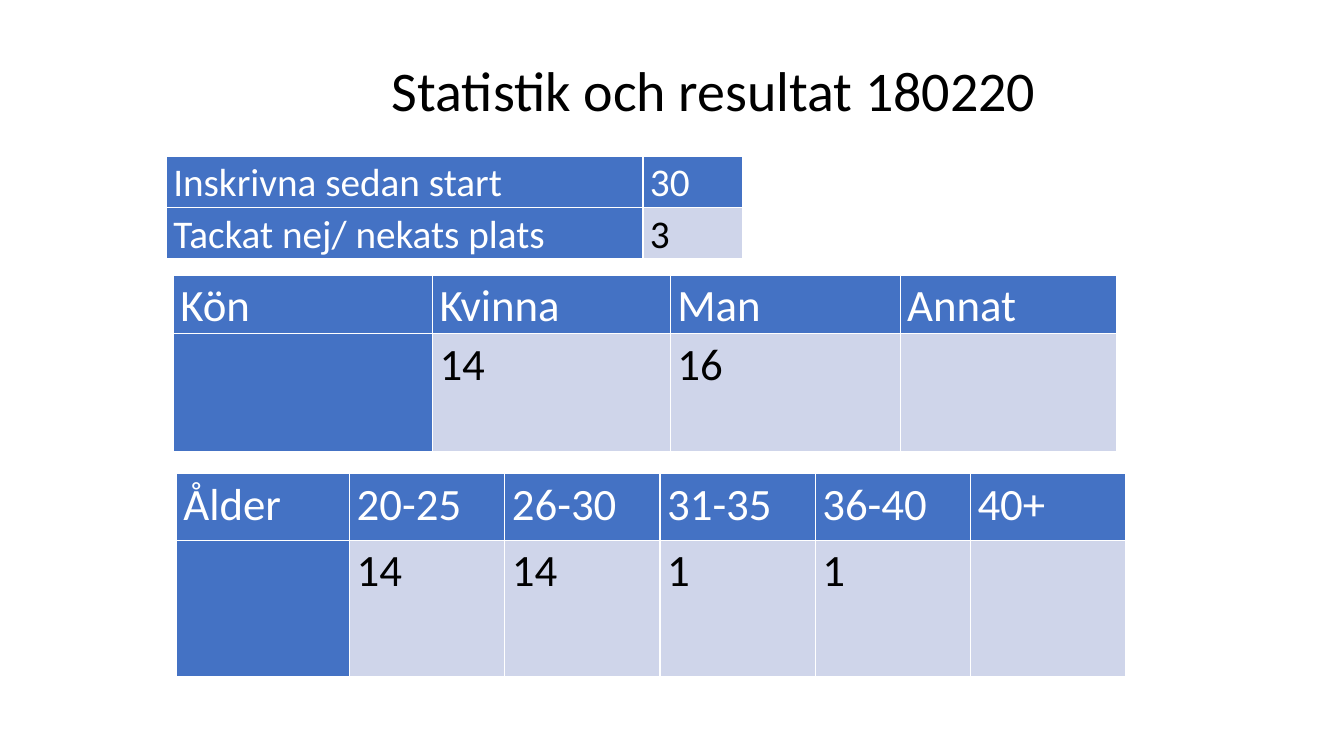
"""Build the statistics slide with its three tables."""
from dataclasses import dataclass

from lxml.etree import SubElement
from pptx import Presentation
from pptx.dml.color import RGBColor
from pptx.enum.text import MSO_ANCHOR, PP_ALIGN
from pptx.oxml.ns import qn
from pptx.util import Inches, Pt

WIDE, HIGH = Inches(13.33), Inches(7.5)
FONT = "Calibri"
HUES = {"head": "4472C4", "body": "CFD5EA", "white": "FFFFFF", "black": "000000"}


@dataclass
class Grid:
    left: float
    top: float
    cols: list[float]
    rows: list[float]
    size: int
    cells: list[list[str]]


GRIDS = [
    Grid(12.9, 36.4, [19.28, 17.7, 17.1, 16.12], [7.73, 15.6], 32,
         [["Kön", "Kvinna", "Man", "Annat"], ["", "14", "16", ""]]),
    Grid(13.12, 62.67, [12.9] + [11.55] * 5, [8.8, 18], 32,
         [["Ålder", "20-25", "26-30", "31-35", "36-40", "40+"],
          ["", "14", "14", "1", "1", ""]]),
    Grid(12.37, 20.67, [35.47, 7.42], [6.67] * 2, 28,
         [["Inskrivna sedan start", "30"], ["Tackat nej/ nekats plats", "3"]]),
]


def across(share: float) -> int:
    return round(WIDE * share / 100)


def down(share: float) -> int:
    return round(HIGH * share / 100)


def style(para, size: int, hue: str, space: float) -> None:
    para.line_spacing = space
    font = para.font
    font.name, font.size, font.bold = FONT, Pt(size), False
    font.color.rgb = RGBColor.from_string(HUES[hue])


def edge(cell) -> None:
    props = cell._tc.get_or_add_tcPr()
    for side in ("lnL", "lnR", "lnT", "lnB"):
        line = SubElement(props, qn(f"a:{side}"), w=str(Pt(1)))
        fill = SubElement(line, qn("a:solidFill"))
        SubElement(fill, qn("a:srgbClr"), val=HUES["white"])


def draw(slide, grid: Grid) -> None:
    frame = slide.shapes.add_table(
        len(grid.rows), len(grid.cols), across(grid.left), down(grid.top),
        across(sum(grid.cols)), down(sum(grid.rows)))
    table = frame.table
    table.first_col = True
    for col, share in zip(table.columns, grid.cols):
        col.width = across(share)
    for row, share in zip(table.rows, grid.rows):
        row.height = down(share)
    for y, words in enumerate(grid.cells):
        for x, word in enumerate(words):
            cell = table.cell(y, x)
            head = x == 0 or y == 0
            edge(cell)
            cell.fill.solid()
            cell.fill.fore_color.rgb = RGBColor.from_string(
                HUES["head" if head else "body"])
            cell.margin_left = cell.margin_right = Inches(0.07)
            cell.margin_top = cell.margin_bottom = 0
            if word:
                cell.text = word
                style(cell.text_frame.paragraphs[0], grid.size,
                      "white" if head else "black", 1.07)


def main() -> None:
    deck = Presentation()
    deck.slide_width, deck.slide_height = WIDE, HIGH
    slide = deck.slides.add_slide(deck.slide_layouts[5])
    title = slide.shapes.title
    title.left, title.top = across(11.33), down(4)
    title.width, title.height = across(83.55), down(16.67)
    title.text = "Statistik och resultat 180220"
    title.text_frame.vertical_anchor = MSO_ANCHOR.MIDDLE
    para = title.text_frame.paragraphs[0]
    para.alignment = PP_ALIGN.CENTER
    style(para, 40, "black", 0.9)
    for grid in GRIDS:
        draw(slide, grid)
    deck.save("out.pptx")


if __name__ == "__main__":
    main()
